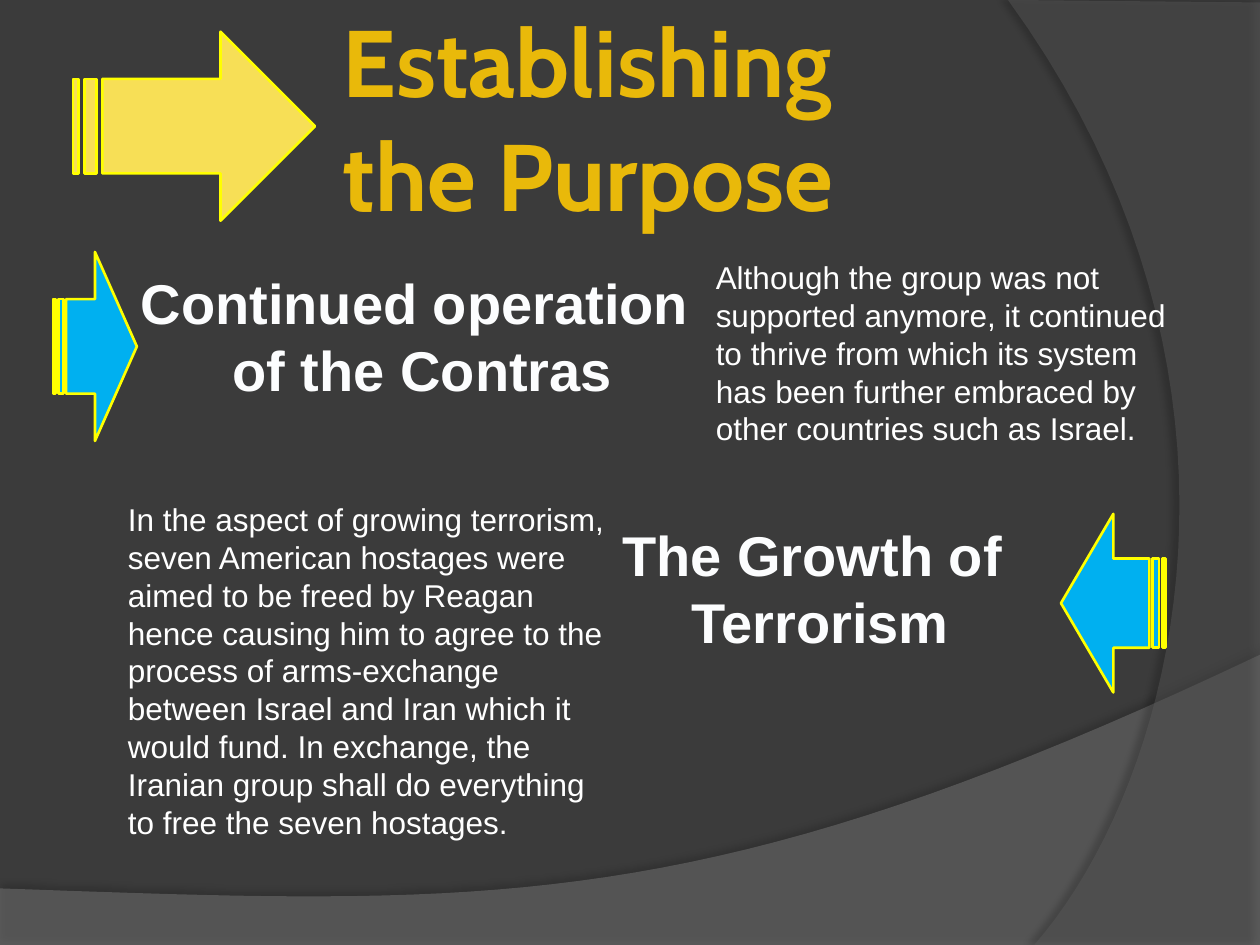
from lxml import etree
from pptx import Presentation
from pptx.dml.color import RGBColor
from pptx.enum import shapes, text
from pptx.oxml.ns import qn
from pptx.util import Cm, Pt

DARK = RGBColor(0x3B, 0x3B, 0x3B)
GOLD = RGBColor(0xE9, 0xB9, 0x0A)
SAND = RGBColor(0xF7, 0xDF, 0x56)
YELLOW = RGBColor(0xFF, 0xFF, 0x00)
BLUE = RGBColor(0x00, 0xB0, 0xF0)
WHITE = RGBColor(0xFF, 0xFF, 0xFF)
NEAR_WHITE = RGBColor(0xFC, 0xFD, 0xFE)
BAND_GRAY = RGBColor(0x7F, 0x7F, 0x7F)
SIDE_GRAY = RGBColor(0x5E, 0x5E, 0x5E)

# Content; boxes are left, top, width, height in cm
TITLE = "Establishing \vthe Purpose"
TITLE_BOX = (6.78, 0.76, 18.62, 3.18)
HEADINGS = [
    (("Continued operation ", "of the Contras"), (2.54, 5.28, 11.96, 3)),
    (("The Growth of ", "Terrorism"), (12.27, 10.36, 8.53, 3)),
]
NOTES = [
    ("Although the group was not supported anymore, it continued to thrive "
     "from which its system has been further embraced by other countries "
     "such as Israel.", (14.18, 5.08, 10.16, 4.11)),
    ("In the aspect of growing terrorism, seven American hostages were aimed "
     "to be freed by Reagan hence causing him to agree to the process of "
     "arms-exchange between Israel and Iran which it would fund. In exchange, "
     "the Iranian group shall do everything to free the seven hostages.",
     (2.33, 9.96, 10.16, 7.19)),
]
ARROWS = [  # box, fill, points left
    ((1.47, 0.64, 4.88, 3.81), SAND, False),
    ((1.07, 5.08, 1.69, 3.81), BLUE, False),
    ((21.39, 10.36, 2.11, 3.6), BLUE, True),
]
BANDS = [  # straight corners, Bezier curve from the last corner, look, shadow
    ([(0, 17.91), (0, 19.05), (25.4, 19.05), (25.4, 13.2)],
     [(14.2, 18.52), (9.93, 18.26), (0, 17.91)], BAND_GRAY, 45, (35, 3.5, 270)),
    ([(25.4, 0.05), (25.4, 19.05), (20.85, 19.05)],
     [(23.75, 15.72), (25.86, 7.62), (20.32, 0)], SIDE_GRAY, 40, (45, 4, 180)),
]


def place(shape, box):
    shape.left, shape.top, shape.width, shape.height = map(Cm, box)


def style(para, size, color, name="Arial", bold=False):
    font = para.font
    font.name, font.size, font.bold = name, Pt(size), bold
    font.color.rgb = color


def curve_points(start, controls, steps=40):
    ends = [start, *controls]
    for step in range(1, steps + 1):
        t = step / steps
        weights = ((1 - t) ** 3, 3 * t * (1 - t) ** 2, 3 * t * t * (1 - t), t ** 3)
        yield tuple(sum(w * p[axis] for w, p in zip(weights, ends))
                    for axis in (0, 1))


def set_alpha(color, percent):
    etree.SubElement(color, qn("a:alpha"), val=str(percent * 1000))


def add_band(page, corners, controls, color, opacity, shadow):
    outline = [(Cm(x), Cm(y))
               for x, y in [*corners, *curve_points(corners[-1], controls)]]
    builder = page.shapes.build_freeform(*outline[0])
    builder.add_line_segments(outline[1:], close=True)
    band = builder.convert_to_shape()
    band.fill.solid()
    band.fill.fore_color.rgb = color
    band.line.fill.background()
    properties = band._element.spPr
    set_alpha(properties.find(".//" + qn("a:srgbClr")), opacity)
    # Soft edge shadow
    strength, distance, angle = shadow
    effects = etree.SubElement(properties, qn("a:effectLst"))
    outer = etree.SubElement(effects, qn("a:outerShdw"), blurRad=str(Pt(4)),
                             dist=str(Pt(distance)), dir=str(angle * 60000))
    set_alpha(etree.SubElement(outer, qn("a:srgbClr"), val="000000"), strength)
    return band


def add_text(page, lines, box, size, color, wrap, align, bold=False):
    frame_box = page.shapes.add_textbox(*map(Cm, box))
    frame = frame_box.text_frame
    frame.word_wrap = wrap
    frame.text = "\n".join(lines)
    for para in frame.paragraphs:
        para.alignment = align
        style(para, size, color, bold=bold)


deck = Presentation()
deck.slide_width, deck.slide_height = Cm(25.4), Cm(19.05)
page = deck.slides.add_slide(deck.slide_layouts[5])
page.background.fill.solid()
page.background.fill.fore_color.rgb = DARK

# Curved background bands
for band in BANDS:
    add_band(page, *band)

# Title, brought in front of the bands
title = page.shapes.title
page.shapes._spTree.append(title._element)
place(title, TITLE_BOX)
frame = title.text_frame
frame.text = TITLE
frame.word_wrap = True
frame.auto_size = text.MSO_AUTO_SIZE.NONE
frame.vertical_anchor = text.MSO_ANCHOR.MIDDLE
frame.margin_left = frame.margin_right = Cm(0.13)
frame.margin_top = frame.margin_bottom = Cm(0.13)
frame.paragraphs[0].alignment = text.PP_ALIGN.LEFT
style(frame.paragraphs[0], 54, GOLD, "Cabin", True)

# Headings and explanations
for lines, box in HEADINGS:
    add_text(page, lines, box, 32, NEAR_WHITE, False, text.PP_ALIGN.CENTER, True)
for note, box in NOTES:
    add_text(page, [note], box, 18, WHITE, True, text.PP_ALIGN.LEFT)

# Striped arrows
for box, color, points_left in ARROWS:
    arrow = page.shapes.add_shape(
        shapes.MSO_SHAPE.STRIPED_RIGHT_ARROW, *map(Cm, box))
    arrow.shadow.inherit = False
    arrow.fill.solid()
    arrow.fill.fore_color.rgb = color
    arrow.line.color.rgb = YELLOW
    arrow.line.width = Pt(1.5)
    if points_left:
        arrow._element.spPr.xfrm.set("flipH", "1")

deck.save("out.pptx")
